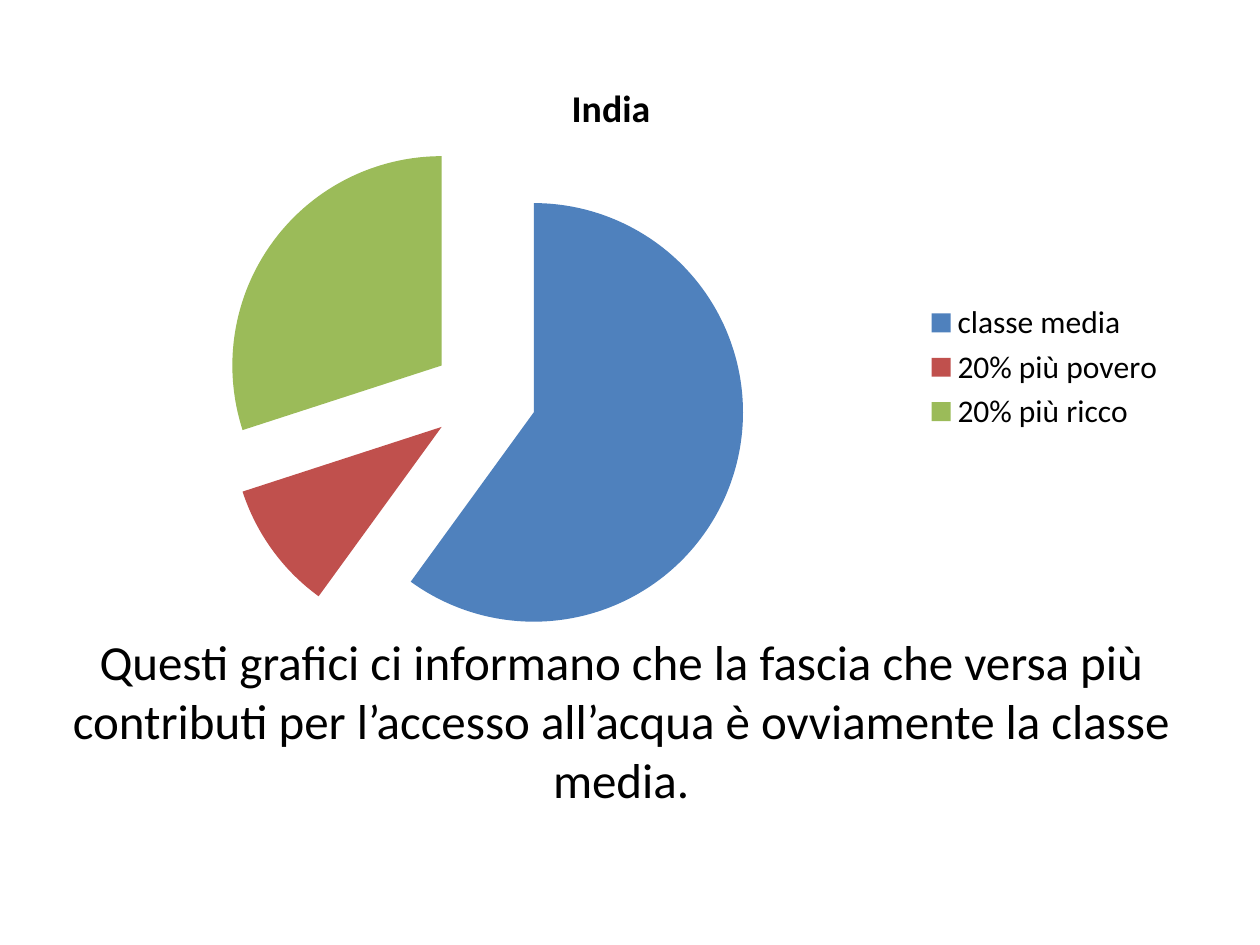
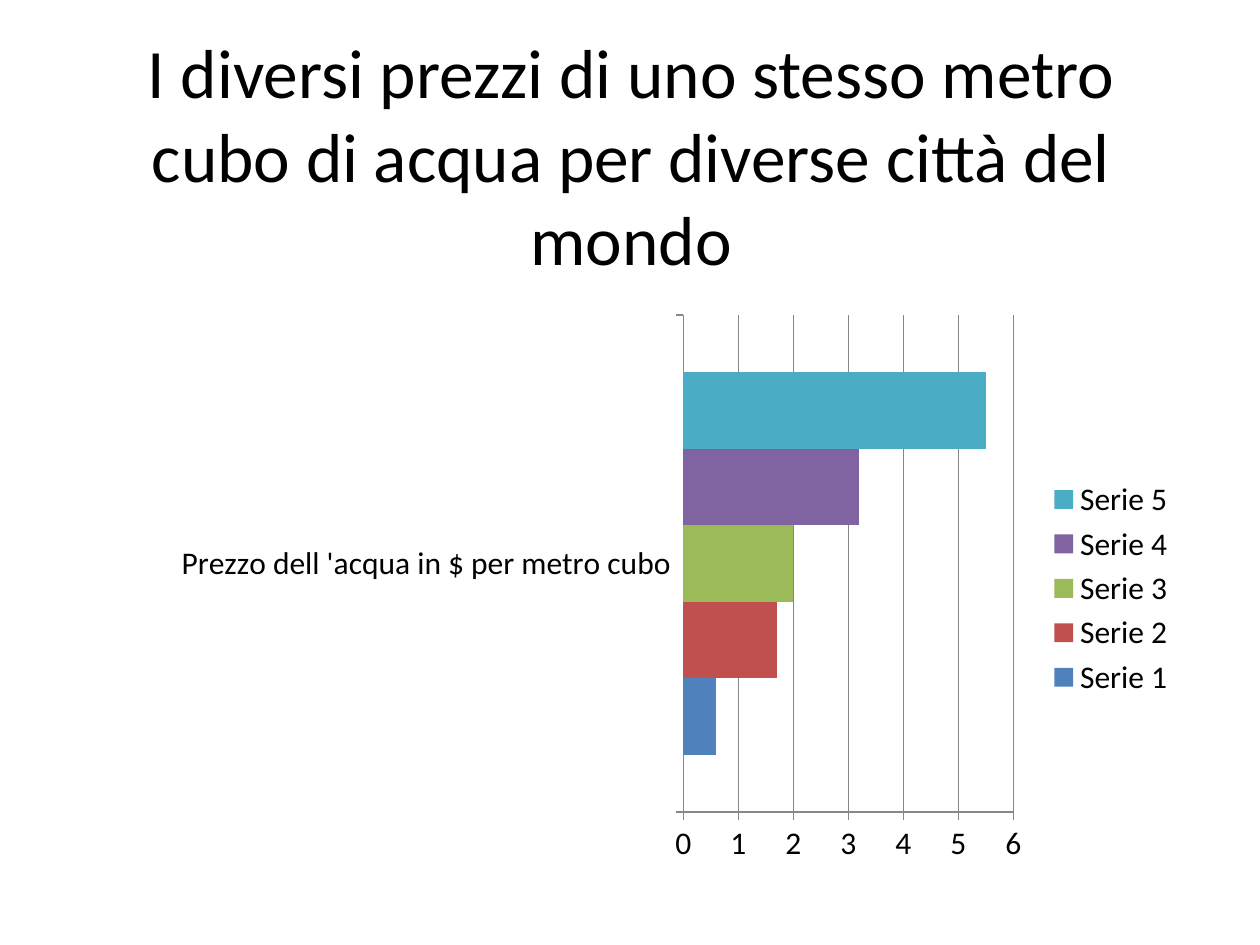
from lxml.etree import SubElement, Element
from pptx import Presentation
from pptx.chart.data import CategoryChartData
from pptx.dml.color import RGBColor
from pptx.enum.chart import XL_CHART_TYPE, XL_LEGEND_POSITION, XL_TICK_MARK
from pptx.enum.text import MSO_ANCHOR, MSO_AUTO_SIZE, PP_ALIGN
from pptx.oxml.ns import qn
from pptx.util import Inches, Pt

FONT = "Calibri"
BLACK, GREY = "000000", "878787"
PALETTE = ["4F81BD", "C0504D", "9BBB59", "8064A2", "4BACC6"]

INDIA = {
    "title": "Questi grafici ci informano che la fascia che versa più contributi "
             "per l’accesso all’acqua è ovviamente la classe media.",
    "title_size": 28,
    "title_box": (0.43, 5.09, 9, 1.25),
    "kind": XL_CHART_TYPE.PIE,
    "chart_box": (0.35, 0.44, 9, 4.95),
    "plot_area": (0.017, 0.127, 0.742, 0.839),
    "categories": ["classe media", "20% più povero", "20% più ricco"],
    "series": [("India", [60, 10, 30])],
}
PRICES = {
    "title": "I diversi prezzi di uno stesso metro cubo di acqua "
             "per diverse città del mondo",
    "title_size": 39.6,
    "title_box": (0.51, 0.6, 9, 1.25),
    "kind": XL_CHART_TYPE.BAR_CLUSTERED,
    "chart_box": (0.43, 2.41, 9, 4.52),
    "plot_area": (0.555, 0.02, 0.291, 0.873),
    "categories": ["Prezzo dell 'acqua in $ per metro cubo"],
    "series": [(f"Serie {number}", [price])
               for number, price in enumerate([0.6, 1.7, 2, 3.2, 5.5], start=1)],
}


def color(value):
    """Turn a hex string into a colour."""
    return RGBColor.from_string(value)


def style_font(font, size, bold=False):
    """Apply the shared typeface and text colour."""
    font.name, font.size, font.bold = FONT, Pt(size), bold
    font.color.rgb = color(BLACK)


def paint(part, value):
    """Fill a series or a point with one solid colour."""
    part.format.fill.solid()
    part.format.fill.fore_color.rgb = color(value)


def set_title(slide, content):
    """Place and format the slide title."""
    title = slide.shapes.title
    title.left, title.top, title.width, title.height = map(Inches, content["title_box"])
    frame = title.text_frame
    frame.word_wrap = True
    frame.auto_size = MSO_AUTO_SIZE.NONE
    frame.vertical_anchor = MSO_ANCHOR.MIDDLE
    para = frame.paragraphs[0]
    para.alignment = PP_ALIGN.CENTER
    span = para.add_run()
    span.text = content["title"]
    style_font(span.font, content["title_size"])


def set_plot_area(chart, fractions):
    """Fix the inner plot area as fractions of the chart."""
    area = chart._chartSpace.chart.plotArea
    for old in area.findall(qn("c:layout")):
        area.remove(old)
    layout = Element(qn("c:layout"))
    area.insert(0, layout)
    manual = SubElement(layout, qn("c:manualLayout"))
    settings = [("layoutTarget", "inner"), ("xMode", "edge"), ("yMode", "edge")]
    for tag, value in settings + list(zip("xywh", fractions)):
        SubElement(manual, qn(f"c:{tag}")).set("val", str(value))


def add_chart(slide, content):
    """Add a chart with the shared font, legend and plot placement."""
    data = CategoryChartData()
    data.categories = content["categories"]
    for name, values in content["series"]:
        data.add_series(name, values)
    box = map(Inches, content["chart_box"])
    chart = slide.shapes.add_chart(content["kind"], *box, data).chart
    style_font(chart.font, 18)
    chart.has_title = False
    chart.has_legend = True
    chart.legend.position = XL_LEGEND_POSITION.RIGHT
    chart.legend.include_in_layout = False
    set_plot_area(chart, content["plot_area"])
    return chart


def style_pie(chart):
    """Title the pie, separate its slices and colour them."""
    series = chart.plots[0].series[0]
    chart.has_title = True
    span = chart.chart_title.text_frame.paragraphs[0].add_run()
    span.text = series.name
    style_font(span.font, 21.6, bold=True)
    chart.plots[0].vary_by_categories = True
    explosion = Element(qn("c:explosion"))
    explosion.set("val", "25")
    series._element.find(qn("c:tx")).addnext(explosion)
    for index in range(len(series.values)):
        paint(series.points[index], PALETTE[index])


def style_bars(chart):
    """Colour the bars and draw grey axes and gridlines."""
    plot = chart.plots[0]
    plot.vary_by_categories = False
    plot.gap_width, plot.overlap = 150, 0
    for series, value in zip(plot.series, PALETTE):
        paint(series, value)
    axis = chart.value_axis
    axis.minimum_scale, axis.maximum_scale, axis.major_unit = 0, 6, 1
    axis.has_major_gridlines = True
    chart.category_axis.has_major_gridlines = False
    for part in (chart.category_axis, axis):
        part.major_tick_mark = XL_TICK_MARK.OUTSIDE
        part.minor_tick_mark = XL_TICK_MARK.NONE
    for part in (chart.category_axis, axis, axis.major_gridlines):
        part.format.line.color.rgb = color(GREY)
        part.format.line.width = Pt(0.75)


def main():
    """Build the deck."""
    deck = Presentation()
    deck.slide_width, deck.slide_height = Inches(10), Inches(7.5)
    for content, style_chart in ((INDIA, style_pie), (PRICES, style_bars)):
        slide = deck.slides.add_slide(deck.slide_layouts[5])
        set_title(slide, content)
        style_chart(add_chart(slide, content))
    deck.save("out.pptx")


if __name__ == "__main__":
    main()
